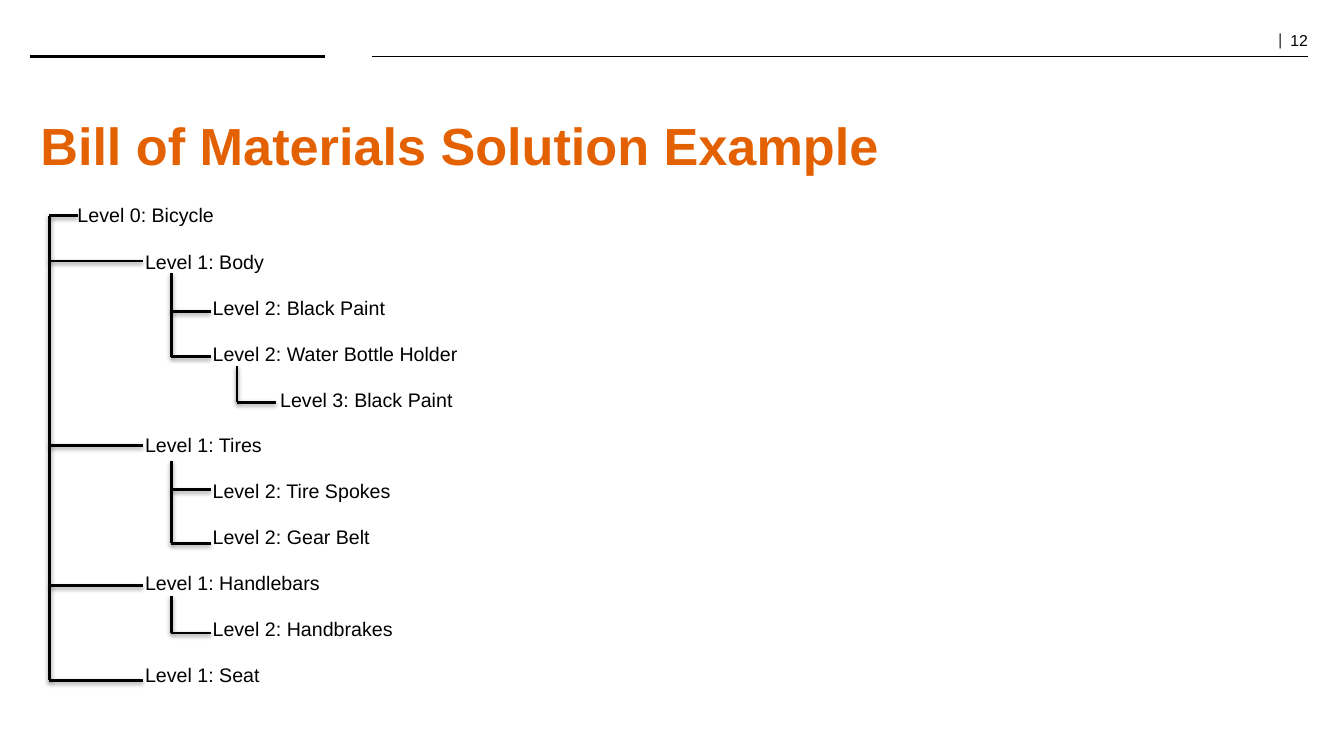
import pptx
import pptx.dml.color
import pptx.enum.shapes
import pptx.enum.text
import pptx.oxml.ns
import pptx.util
import lxml.etree

Inches = pptx.util.Inches
Pt = pptx.util.Pt
qn = pptx.oxml.ns.qn
ALIGN = pptx.enum.text.PP_ALIGN
ANCHOR = pptx.enum.text.MSO_ANCHOR
COLORS = {"ink": "000000", "accent": "E46102"}
LEVEL_INDENT = 0.67

# Level and part name of every row in the bill of materials
PARTS = [
    (0, "Bicycle"),
    (1, "Body"),
    (2, "Black Paint"),
    (2, "Water Bottle Holder"),
    (3, "Black Paint"),
    (1, "Tires"),
    (2, "Tire Spokes"),
    (2, "Gear Belt"),
    (1, "Handlebars"),
    (2, "Handbrakes"),
    (1, "Seat"),
]

# Each trunk: x, top, then its branches as (right end, y)
TRUNKS = [
    (0.49, 2.14, [(0.77, 2.14), (1.42, 2.59), (1.42, 4.42), (1.42, 5.81), (1.42, 6.75)]),
    (1.7, 2.71, [(2.09, 3.09), (2.09, 3.54)]),
    (2.35, 3.63, [(2.74, 3.99)]),
    (1.7, 4.57, [(2.09, 4.86), (2.09, 5.39)]),
    (1.7, 5.91, [(2.09, 6.28)]),
]


def add_span(para, text, size=14, font="Arial", color="ink", bold=False):
    span = para.add_run()
    span.text = text
    span.font.size = Pt(size)
    span.font.name = font
    span.font.bold = bold
    span.font.color.rgb = pptx.dml.color.RGBColor.from_string(COLORS[color])
    return span


class SlideBuilder:
    def __init__(self, deck):
        layout = deck.slide_layouts.get_by_name("Title Only")
        self.page = deck.slides.add_slide(layout)

    def title(self, text, left, top, width, height):
        box = self.page.shapes.title
        box.left, box.top = Inches(left), Inches(top)
        box.width, box.height = Inches(width), Inches(height)
        frame = box.text_frame
        frame.auto_size = pptx.enum.text.MSO_AUTO_SIZE.NONE
        frame.vertical_anchor = ANCHOR.MIDDLE
        para = frame.paragraphs[0]
        para.alignment = ALIGN.LEFT
        add_span(para, text, size=37.3, color="accent", bold=True)

    def text_box(self, left, top, width, height, inset=0.05):
        box = self.page.shapes.add_textbox(
            Inches(left), Inches(top), Inches(width), Inches(height))
        frame = box.text_frame
        frame.word_wrap = True
        frame.vertical_anchor = ANCHOR.TOP
        frame.margin_left = frame.margin_right = Inches(0.1)
        frame.margin_top = frame.margin_bottom = Inches(inset)
        return frame

    def page_number(self, number):
        para = self.text_box(11.71, 0.28, 1.36, 0.26).paragraphs[0]
        para.alignment = ALIGN.RIGHT
        para.line_spacing = 0.8
        add_span(para, "|  ", size=12, font="Cambria")
        add_span(para, number, size=11.3)

    def parts_list(self, parts):
        frame = self.text_box(0.67, 1.91, 9.32, 3.65, inset=0.1)
        for index, (level, name) in enumerate(parts):
            para = frame.add_paragraph() if index else frame.paragraphs[0]
            indent = Inches(level * LEVEL_INDENT)
            para._p.get_or_add_pPr().set("marL", str(indent))
            para.line_spacing = Pt(16.8)
            if index:
                para.space_before = Pt(16.8 if index == 1 else 16)
            add_span(para, f"Level {level}: {name}")

    def line(self, x1, y1, x2, y2, width=2, shadow=False):
        line = self.page.shapes.add_connector(
            pptx.enum.shapes.MSO_CONNECTOR.STRAIGHT,
            Inches(x1), Inches(y1), Inches(x2), Inches(y2))
        line.line.width = Pt(width)
        line.line.color.rgb = pptx.dml.color.RGBColor.from_string(COLORS["ink"])
        effects = lxml.etree.SubElement(line._element.spPr, qn("a:effectLst"))
        if shadow:
            outer = lxml.etree.SubElement(
                effects, qn("a:outerShdw"), blurRad=str(Pt(3.1)),
                dist=str(Pt(1.6)), dir="5400000", rotWithShape="0")
            color = lxml.etree.SubElement(outer, qn("a:srgbClr"), val=COLORS["ink"])
            lxml.etree.SubElement(color, qn("a:alpha"), val="38000")

    def trunk(self, x, top, branches):
        bottom = branches[-1][1]
        self.line(x, top, x, bottom, shadow=True)
        for right, y in branches:
            self.line(x, y, right, y, shadow=True)


def main():
    deck = pptx.Presentation()
    deck.slide_width, deck.slide_height = Inches(13.33), Inches(7.5)
    slide = SlideBuilder(deck)

    # Header
    slide.page_number("12")
    slide.line(0.3, 0.56, 3.22, 0.56)
    slide.line(3.69, 0.56, 12.97, 0.56, width=1)
    slide.title("Bill of Materials Solution Example", 0.3, 1.05, 12.67, 0.76)

    # Bill of materials tree
    slide.parts_list(PARTS)
    for x, top, branches in TRUNKS:
        slide.trunk(x, top, branches)

    deck.save("out.pptx")


if __name__ == "__main__":
    main()
